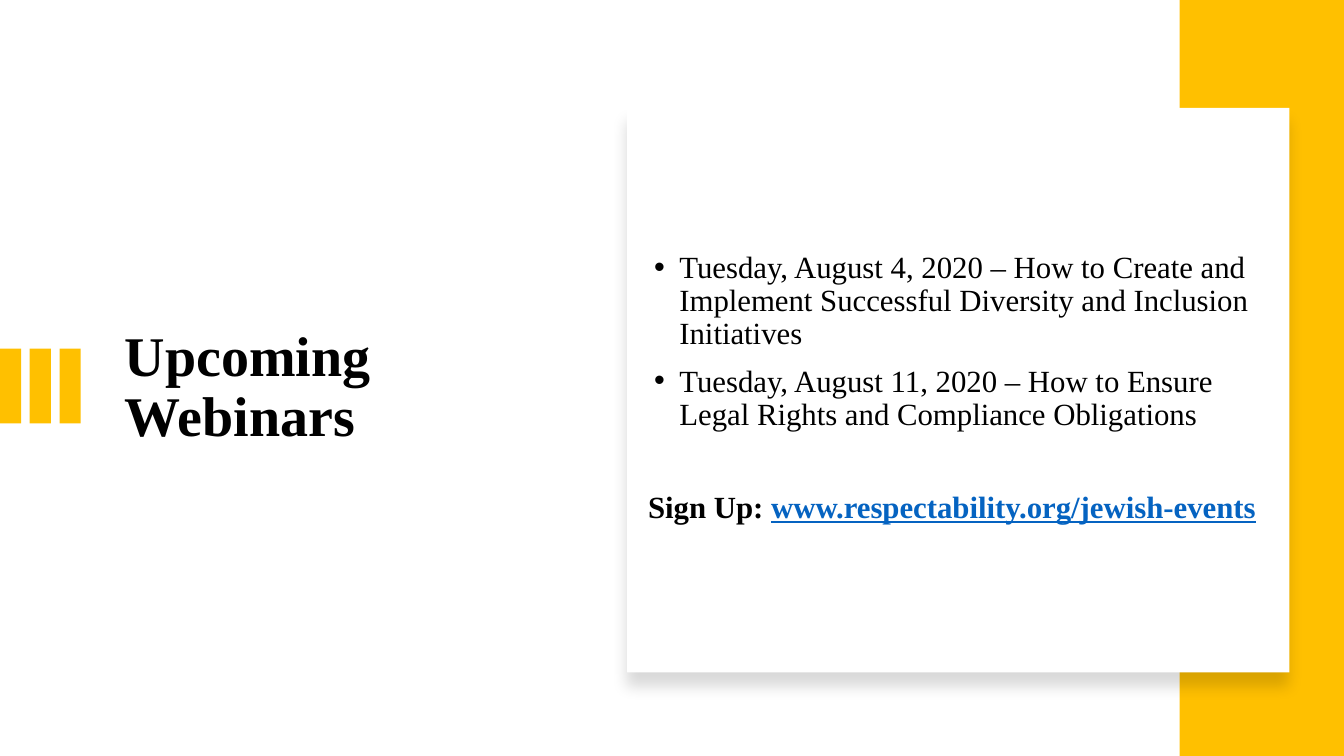
from lxml.etree import SubElement
from pptx import Presentation
from pptx.dml.color import RGBColor
from pptx.enum.shapes import MSO_SHAPE
from pptx.enum.text import MSO_ANCHOR
from pptx.oxml.ns import qn
from pptx.util import Inches, Pt

COLORS = {"white": "FFFFFF", "gold": "FFC000", "text": "000000", "link": "0563C1"}
FONT = "Times New Roman"
WEBINARS = [
    "Tuesday, August 4, 2020 – How to Create and Implement Successful Diversity and Inclusion Initiatives",
    "Tuesday, August 11, 2020 – How to Ensure Legal Rights and Compliance Obligations",
]


def add_rectangle(slide, left, top, width, height, color):
    """Add a borderless filled rectangle, measured in inches."""
    shape = slide.shapes.add_shape(
        MSO_SHAPE.RECTANGLE, Inches(left), Inches(top), Inches(width), Inches(height))
    shape.shadow.inherit = False
    shape.fill.solid()
    shape.fill.fore_color.rgb = RGBColor.from_string(COLORS[color])
    shape.line.fill.background()
    return shape


def add_text_frame(slide, left, top, width, height):
    """Add a wrapping, vertically centred text box and return its frame."""
    box = slide.shapes.add_textbox(Inches(left), Inches(top), Inches(width), Inches(height))
    text_frame = box.text_frame
    text_frame.word_wrap = True
    text_frame.vertical_anchor = MSO_ANCHOR.MIDDLE
    return text_frame


def format_paragraph(paragraph, size, bold=False, space_before=0):
    """Set the spacing of a paragraph and the font of its runs."""
    paragraph.line_spacing = 0.9
    paragraph.space_before = Pt(space_before)
    for run in paragraph.runs:
        run.font.name = FONT
        run.font.size = Pt(size)
        run.font.bold = bold
        run.font.color.rgb = RGBColor.from_string(COLORS["text"])


def add_bullet(paragraph):
    """Give a paragraph a round bullet with a hanging indent."""
    properties = paragraph._p.get_or_add_pPr()
    properties.set("marL", str(Inches(0.31)))
    properties.set("indent", str(Inches(-0.25)))
    SubElement(properties, qn("a:buFont"), typeface="Arial")
    SubElement(properties, qn("a:buChar"), char="•")


def add_soft_shadow(shape):
    """Cast a soft shadow straight down from a shape."""
    effects = shape._element.spPr.find(qn("a:effectLst"))
    shadow = SubElement(effects, qn("a:outerShdw"), blurRad=str(Pt(11)), dist=str(Pt(10)),
                        dir="5400000", algn="t", rotWithShape="0")
    color = SubElement(shadow, qn("a:srgbClr"), val=COLORS["text"])
    SubElement(color, qn("a:alpha"), val="15000")


def add_title(slide, left, top, width, height):
    """Place the slide title in its box."""
    text_frame = add_text_frame(slide, left, top, width, height)
    text_frame.text = "Upcoming Webinars"
    format_paragraph(text_frame.paragraphs[0], 40, bold=True)


def add_accent_bars(slide, left, top, width, height):
    """Spread three equal gold bars across the box."""
    bar_width = 0.21
    pitch = (width - bar_width) / 2
    for index in range(3):
        add_rectangle(slide, left + index * pitch, top, bar_width, height, "gold")


def add_webinar_card(slide, left, top, width, height):
    """Place the shadowed card with the webinar list and sign-up line."""
    add_soft_shadow(add_rectangle(slide, left, top, width, height, "white"))
    text_frame = add_text_frame(slide, left + 0.11, top + 0.39, width - 0.15, height - 0.81)
    for index, webinar in enumerate(WEBINARS):
        paragraph = text_frame.paragraphs[0] if index == 0 else text_frame.add_paragraph()
        paragraph.text = webinar
        add_bullet(paragraph)
        format_paragraph(paragraph, 22, space_before=10 if index else 0)

    sign_up = text_frame.add_paragraph()
    sign_up.text = "Sign Up: "
    address = sign_up.add_run()
    address.text = "www.respectability.org/jewish-events"
    format_paragraph(sign_up, 22, bold=True, space_before=43)
    address.font.underline = True
    address.font.color.rgb = RGBColor.from_string(COLORS["link"])


def main():
    """Build and save the slide."""
    presentation = Presentation()
    presentation.slide_width = Inches(13.33)
    presentation.slide_height = Inches(7.5)
    slide = presentation.slides.add_slide(presentation.slide_layouts[6])
    add_rectangle(slide, 0, 0, 13.33, 7.5, "white")
    add_title(slide, 1.14, 1.46, 4.26, 4.79)
    add_accent_bars(slide, 0, 3.46, 0.8, 0.74)
    add_rectangle(slide, 11.7, 0, 1.63, 7.5, "gold")
    add_webinar_card(slide, 6.22, 1.07, 6.57, 5.6)
    presentation.save("out.pptx")


if __name__ == "__main__":
    main()
